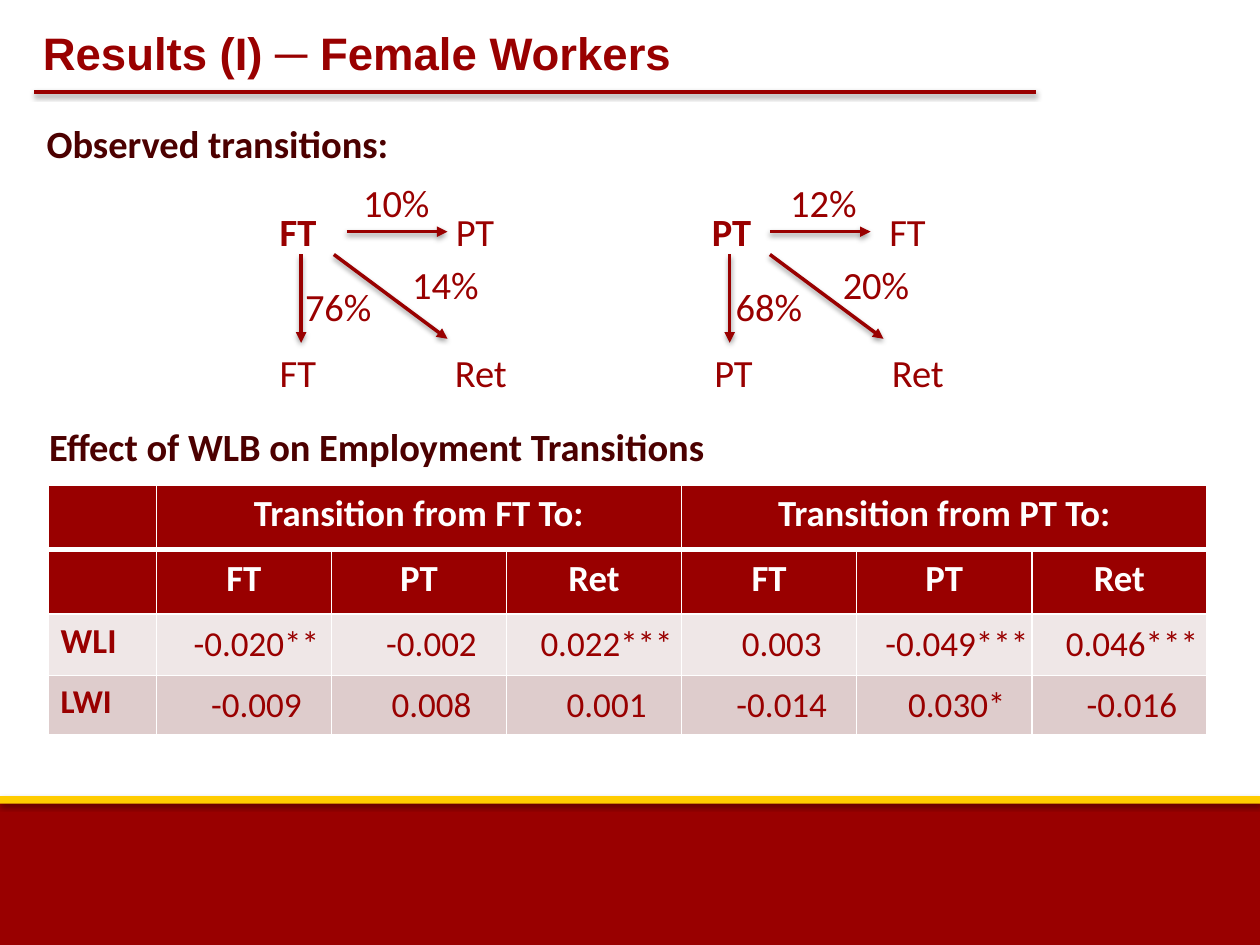
import pptx
import pptx.util
import pptx.dml.color
import pptx.enum.shapes
import pptx.enum.text
from lxml import etree
from pptx.oxml import parse_xml
from pptx.oxml.ns import nsdecls, qn

Cm, Pt = pptx.util.Cm, pptx.util.Pt
RGB = pptx.dml.color.RGBColor.from_string
ALIGN = pptx.enum.text.PP_ALIGN
ANCHOR = pptx.enum.text.MSO_ANCHOR

COLORS = {
    "red": "990000", "dark": "4C0000", "gold": "FFCC00", "white": "FFFFFF",
    "light band": "EFE7E7", "dark band": "DECCCC",
}


def style(font, color, **values):
    font.color.rgb = RGB(COLORS[color])
    for name, value in ({"name": "Calibri", "size": Pt(22)} | values).items():
        setattr(font, name, value)


def add_shadow(shape, opacity, distance):
    """Give the shape a soft black shadow straight below it."""
    shape._element.spPr.append(parse_xml(
        f'<a:effectLst {nsdecls("a")}>'
        f'<a:outerShdw blurRad="{Pt(3.1)}" dist="{Pt(distance)}" dir="5400000" rotWithShape="0">'
        f'<a:srgbClr val="000000"><a:alpha val="{opacity * 1000}"/></a:srgbClr>'
        '</a:outerShdw></a:effectLst>'))


deck = pptx.Presentation()
deck.slide_width, deck.slide_height = Cm(25.4), Cm(19.05)
page = deck.slides.add_slide(deck.slide_layouts[5])

# Footer bands
for top, height, color, opacity, distance in [
    (16.13, 2.92, "red", 35, 1.8),
    (16.05, 0.15, "gold", 38, 1.6),
]:
    band = page.shapes.add_shape(
        pptx.enum.shapes.MSO_SHAPE.RECTANGLE, 0, Cm(top), Cm(25.4), Cm(height))
    band.fill.solid()
    band.fill.fore_color.rgb = RGB(COLORS[color])
    band.line.fill.background()
    add_shadow(band, opacity, distance)

# Title
title = page.shapes.title
title.left, title.top, title.width, title.height = Cm(0.61), Cm(0.13), Cm(15.24), Cm(1.85)
title.text_frame.text = "Results (I) ─ Female Workers"
title.text_frame.vertical_anchor = ANCHOR.MIDDLE
para = title.text_frame.paragraphs[0]
para.alignment = ALIGN.LEFT
style(para.runs[0].font, "red", name="Arial", size=Pt(26), bold=True)

# Headings and diagram labels: left, top, labels with their x on the slide
heading_rows = [
    (0.69, 2.29, "Observed transitions:"),
    (0.74, 8.41, "Effect of WLB on Employment Transitions"),
]
label_rows = [
    (0.74, 4.06, [("FT", 5.64), ("PT", 9.19), ("PT", 14.35), ("FT", 17.93)]),
    (0.71, 6.91, [("FT", 5.64), ("Ret", 9.17), ("PT", 14.4), ("Ret", 17.98)]),
    (1.22, 5.59, [("76%", 6.15), ("68%", 14.83)]),
    (2.39, 3.48, [("10%", 7.32), ("12%", 15.93)]),
    (3.56, 5.13, [("14%", 8.31), ("20%", 16.99)]),
]
for left, top, content in heading_rows + label_rows:
    box = page.shapes.add_textbox(Cm(left), Cm(top), Cm(23.9), Cm(1.19))
    box.text_frame.word_wrap = True
    box.text_frame.auto_size = pptx.enum.text.MSO_AUTO_SIZE.SHAPE_TO_FIT_TEXT
    para = box.text_frame.paragraphs[0]
    if isinstance(content, str):
        para.space_after = Pt(12)
        span = para.add_run()
        span.text = content
        style(span.font, "dark", bold=True)
        continue
    tabs = etree.SubElement(para._p.get_or_add_pPr(), qn("a:tabLst"))
    for index, (label, x) in enumerate(content):
        etree.SubElement(tabs, qn("a:tab"), pos=str(Cm(x - left - 0.25)), algn="l")
        span = para.add_run()
        span.text = "\t" + label
        # The starting states are the first and third labels of the top row
        style(span.font, "red", bold=top == 4.06 and index % 2 == 0)

# Title rule and transition arrows
for x1, y1, x2, y2, arrow in [
    (20.88, 1.85, 0.69, 1.85, False),
    (6.99, 4.67, 9.02, 4.67, True),
    (15.52, 4.67, 17.55, 4.67, True),
    (6.07, 5.13, 6.07, 6.91, True),
    (14.71, 5.13, 14.71, 6.91, True),
    (6.73, 5.13, 9.02, 6.83, True),
    (15.52, 5.13, 17.81, 6.83, True),
]:
    line = page.shapes.add_connector(
        pptx.enum.shapes.MSO_CONNECTOR.STRAIGHT, Cm(x1), Cm(y1), Cm(x2), Cm(y2))
    line.line.color.rgb = RGB(COLORS["red"])
    line.line.width = Pt(2)
    if arrow:
        etree.SubElement(line.line._get_or_add_ln(), qn("a:tailEnd"), type="triangle")
    add_shadow(line, 38, 1.6)

# Effects table
rows = [
    ["", "Transition from FT To:", "", "", "Transition from PT To:", "", ""],
    ["", "FT", "PT", "Ret", "FT", "PT", "Ret"],
    ["WLI", "-0.020**", "-0.002", "0.022***", "0.003", "-0.049***", "0.046***"],
    ["LWI", "-0.009", "0.008", "0.001", "-0.014", "0.030*", "-0.016"],
]
row_heights = [1.3, 1.3, 1.24, 1.19]
row_fills = ["red", "red", "light band", "dark band"]
table = page.shapes.add_table(
    4, 7, Cm(0.97), Cm(9.78), Cm(23.36), Cm(sum(row_heights))).table
for index, column in enumerate(table.columns):
    column.width = Cm(3.53 if index else 2.18)
for first in (1, 4):
    table.cell(0, first).merge(table.cell(0, first + 2))

for r, values in enumerate(rows):
    table.rows[r].height = Cm(row_heights[r])
    for c, value in enumerate(values):
        cell = table.cell(r, c)
        borders = {"L": 1, "R": 1, "T": 3 if r == 1 else 1, "B": 3 if r == 0 else 1}
        for side, width in borders.items():
            cell._tc.get_or_add_tcPr().append(parse_xml(
                f'<a:ln{side} {nsdecls("a")} w="{Pt(width)}"><a:solidFill>'
                f'<a:srgbClr val="{COLORS["white"]}"/></a:solidFill></a:ln{side}>'))
        cell.fill.solid()
        cell.fill.fore_color.rgb = RGB(COLORS[row_fills[r]])
        if not value:
            continue
        para = cell.text_frame.paragraphs[0]
        span = para.add_run()
        span.text = value
        if r < 2:
            para.alignment = ALIGN.CENTER
            style(span.font, "white", size=Pt(21), bold=True)
        elif c == 0:
            style(span.font, "red", size=Pt(20 if r == 2 else 19), bold=True)
        else:
            para.alignment = ALIGN.CENTER
            para._p.get_or_add_pPr().set("marL", str(Cm(0.51)))
            cell.vertical_anchor = ANCHOR.MIDDLE
            for side in ("left", "right", "top", "bottom"):
                setattr(cell, f"margin_{side}", 0)
            style(span.font, "red", size=Pt(20), bold=False)

deck.save("out.pptx")
